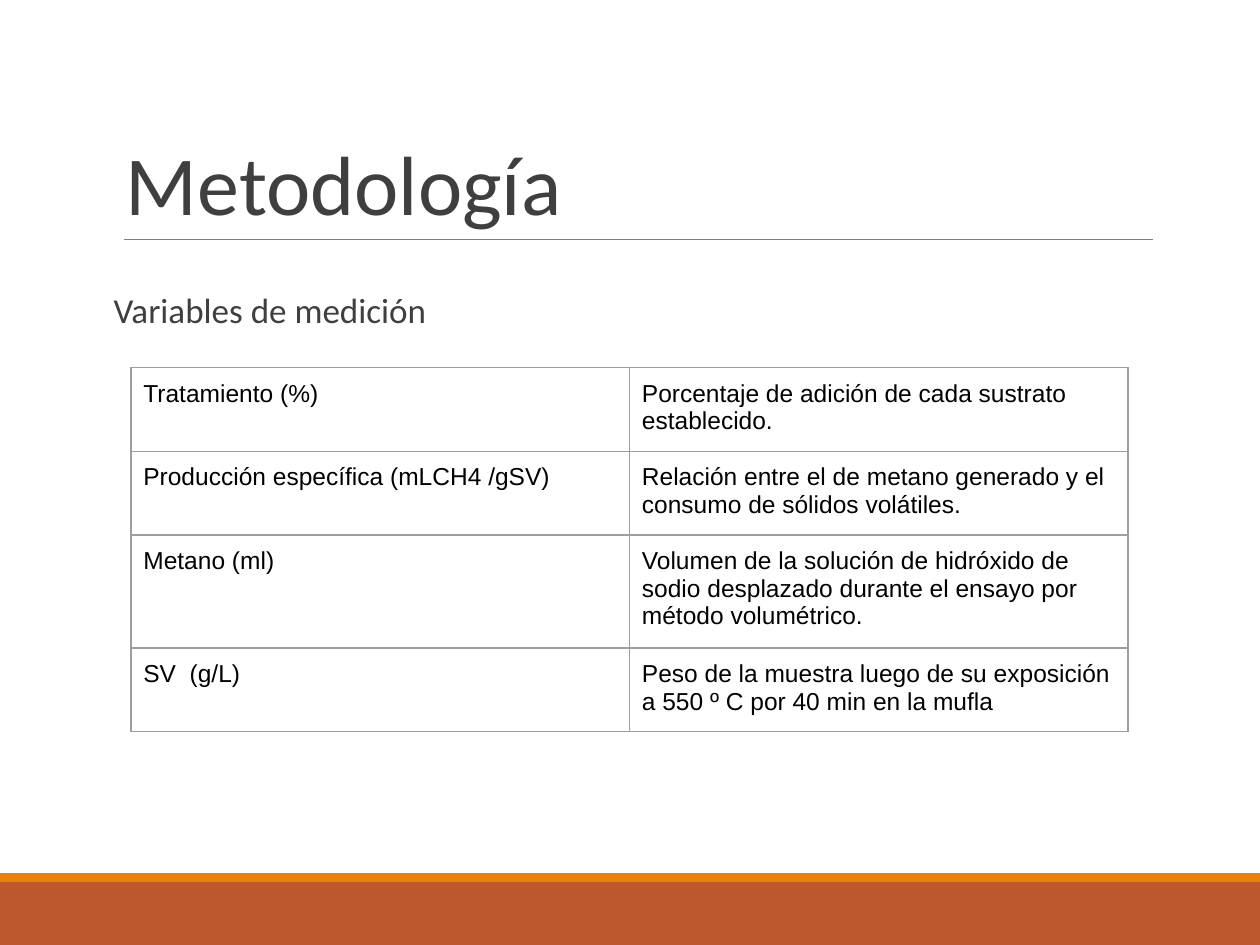
"""Build the methodology slide with its table of measured variables."""
from dataclasses import dataclass

import lxml.etree
import pptx
import pptx.dml.color
import pptx.enum.shapes
import pptx.enum.text
import pptx.oxml.ns
import pptx.util

Cm = pptx.util.Cm
Pt = pptx.util.Pt
RGBColor = pptx.dml.color.RGBColor
Anchor = pptx.enum.text.MSO_ANCHOR
qn = pptx.oxml.ns.qn

RUST = RGBColor(0xBD, 0x58, 0x2C)
ORANGE = RGBColor(0xE4, 0x83, 0x12)
RULE_GRAY = RGBColor(0x7F, 0x7F, 0x7F)
BORDER_GRAY = RGBColor(0x9E, 0x9E, 0x9E)
TEXT_GRAY = RGBColor(0x3F, 0x3F, 0x3F)
BLACK = RGBColor(0, 0, 0)

SLIDE_WIDTH = Cm(25.4)
SLIDE_HEIGHT = Cm(19.05)
TEXT_LEFT = Cm(2.29)
TEXT_WIDTH = Cm(20.96)
COLUMN_WIDTH = Cm(10.05)
CELL_MARGIN = Cm(0.25)
LINE_WIDTH = Pt(0.75)


@dataclass(frozen=True)
class Band:
    top: float
    height: float
    color: RGBColor


@dataclass(frozen=True)
class Heading:
    text: str
    top: float
    height: float
    size: int
    side_margin: float
    anchor: Anchor
    line_spacing: float
    space_before: int = 0
    space_after: int = 0


@dataclass(frozen=True)
class Variable:
    name: str
    description: str
    height: float = 1.61


BANDS = (Band(17.78, 1.27, RUST), Band(17.6, 0.18, ORANGE))
HEADINGS = (
    Heading("Metodología", 0.79, 4.04, 48, 0.25, Anchor.BOTTOM, 0.85),
    Heading("Variables de medición", 5.79, 11.18, 20, 0, Anchor.TOP, 0.9, 12, 2),
)
VARIABLES = (
    Variable("Tratamiento (%)", "Porcentaje de adición de cada sustrato establecido."),
    Variable("Producción específica (mLCH4 /gSV)",
             "Relación entre el de metano generado y el consumo de sólidos volátiles."),
    Variable("Metano (ml)",
             "Volumen de la solución de hidróxido de sodio desplazado durante el ensayo "
             "por método volumétrico.", 2.18),
    Variable("SV  (g/L)",
             "Peso de la muestra luego de su exposición a 550 º C por 40 min en la mufla"),
)


def style_font(font: pptx.text.text.Font, name: str, size: int, color: RGBColor) -> None:
    font.name = name
    font.size = Pt(size)
    font.color.rgb = color


def add_band(slide: pptx.slide.Slide, band: Band) -> None:
    shape = slide.shapes.add_shape(
        pptx.enum.shapes.MSO_SHAPE.RECTANGLE, 0, Cm(band.top), SLIDE_WIDTH, Cm(band.height))
    shape.shadow.inherit = False
    shape.fill.solid()
    shape.fill.fore_color.rgb = band.color
    shape.line.fill.background()


def add_title_rule(slide: pptx.slide.Slide) -> None:
    rule = slide.shapes.add_connector(
        pptx.enum.shapes.MSO_CONNECTOR.STRAIGHT, Cm(2.49), Cm(4.83), Cm(23.24), Cm(4.83))
    rule.line.color.rgb = RULE_GRAY
    rule.line.width = LINE_WIDTH
    lxml.etree.SubElement(rule.element.spPr, qn("a:effectLst"))


def add_heading(slide: pptx.slide.Slide, heading: Heading) -> None:
    shape = slide.shapes.add_textbox(
        TEXT_LEFT, Cm(heading.top), TEXT_WIDTH, Cm(heading.height))
    frame = shape.text_frame
    frame.word_wrap = True
    frame.vertical_anchor = heading.anchor
    frame.margin_left = frame.margin_right = Cm(heading.side_margin)
    frame.margin_top = frame.margin_bottom = Cm(0.13)
    paragraph = frame.paragraphs[0]
    paragraph.text = heading.text
    paragraph.line_spacing = heading.line_spacing
    paragraph.space_before = Pt(heading.space_before)
    paragraph.space_after = Pt(heading.space_after)
    style_font(paragraph.font, "Calibri", heading.size, TEXT_GRAY)


def add_cell_borders(cell: pptx.table._Cell) -> None:
    properties = cell._tc.get_or_add_tcPr()
    for position, side in enumerate(("lnL", "lnR", "lnT", "lnB")):
        border = lxml.etree.Element(qn(f"a:{side}"), w=str(LINE_WIDTH))
        fill = lxml.etree.SubElement(border, qn("a:solidFill"))
        lxml.etree.SubElement(fill, qn("a:srgbClr"), val=str(BORDER_GRAY))
        properties.insert(position, border)


def fill_cell(cell: pptx.table._Cell, text: str) -> None:
    cell.fill.background()
    cell.margin_left = cell.margin_right = CELL_MARGIN
    cell.margin_top = cell.margin_bottom = CELL_MARGIN
    paragraph = cell.text_frame.paragraphs[0]
    paragraph.text = text
    style_font(paragraph.font, "Arial", 14, BLACK)
    add_cell_borders(cell)


def add_variable_table(slide: pptx.slide.Slide, variables: tuple[Variable, ...]) -> None:
    height = Cm(sum(variable.height for variable in variables))
    table = slide.shapes.add_table(
        len(variables), 2, Cm(2.64), Cm(7.41), 2 * COLUMN_WIDTH, height).table
    table.first_row = False
    table.horz_banding = False
    for column in table.columns:
        column.width = COLUMN_WIDTH
    for row, variable in zip(table.rows, variables):
        row.height = Cm(variable.height)
        for cell, text in zip(row.cells, (variable.name, variable.description)):
            fill_cell(cell, text)


def main() -> None:
    presentation = pptx.Presentation()
    presentation.slide_width = SLIDE_WIDTH
    presentation.slide_height = SLIDE_HEIGHT
    slide = presentation.slides.add_slide(presentation.slide_layouts[6])
    for band in BANDS:
        add_band(slide, band)
    add_title_rule(slide)
    for heading in HEADINGS:
        add_heading(slide, heading)
    add_variable_table(slide, VARIABLES)
    presentation.save("out.pptx")


if __name__ == "__main__":
    main()
